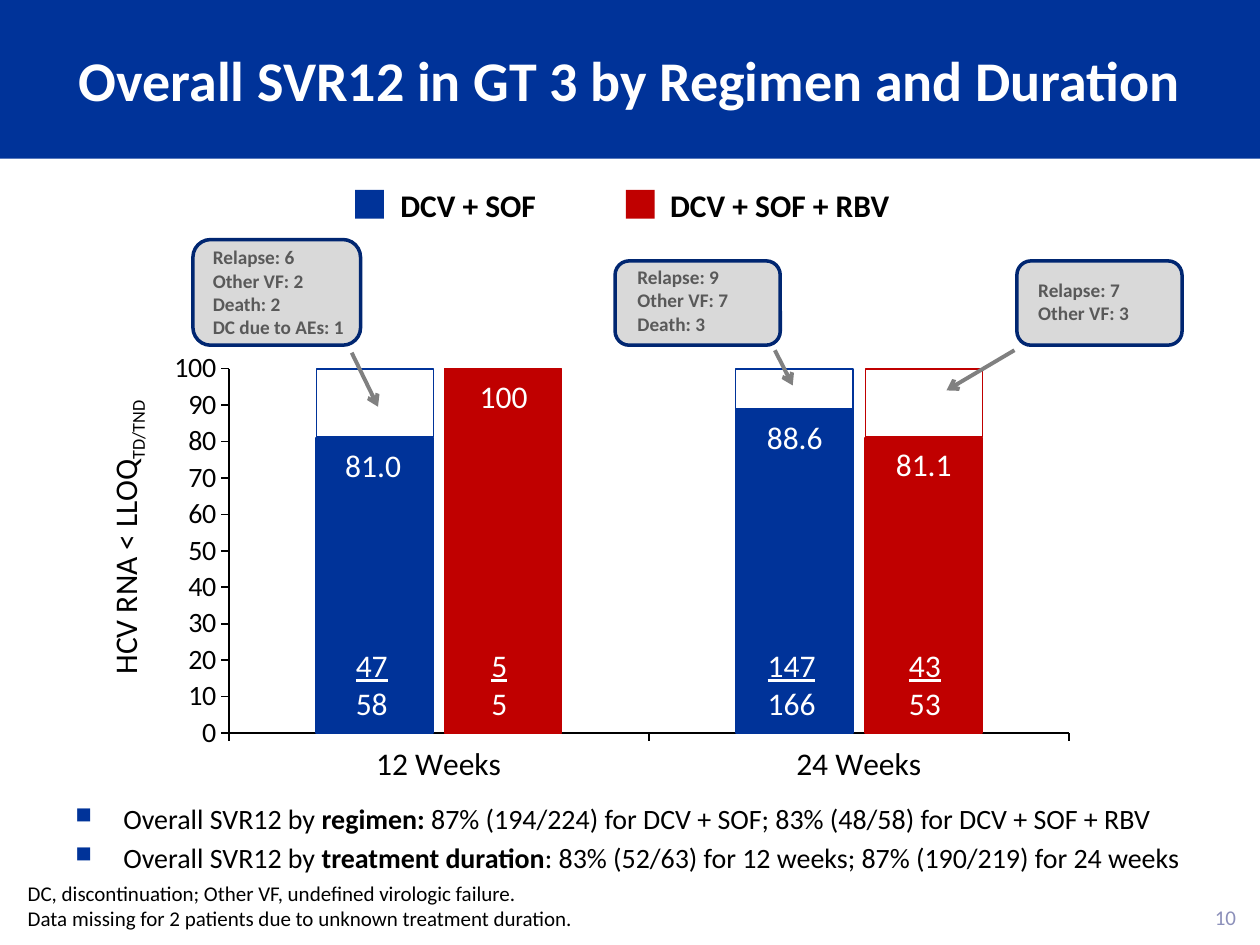
import dataclasses

import lxml.etree
import pptx
import pptx.chart.data
import pptx.dml.color
import pptx.enum.chart
import pptx.enum.shapes
import pptx.enum.text
import pptx.oxml
import pptx.oxml.ns
import pptx.util

Cm = pptx.util.Cm
Pt = pptx.util.Pt
Align = pptx.enum.text.PP_ALIGN
Anchor = pptx.enum.text.MSO_ANCHOR
AutoSize = pptx.enum.text.MSO_AUTO_SIZE
Preset = pptx.enum.shapes.MSO_SHAPE
qn = pptx.oxml.ns.qn


@dataclasses.dataclass(frozen=True)
class Theme:
    font: str = "Calibri"
    blue: str = "003399"
    red: str = "C00000"
    white: str = "FFFFFF"
    black: str = "000000"
    callout_fill: str = "D9D9D9"
    callout_line: str = "002671"
    callout_text: str = "595959"
    arrow: str = "808080"
    page_number: str = "8C90BA"
    title_size: int = 32
    label_size: int = 18
    body_size: int = 16
    note_size: int = 12
    callout_size: int = 11


THEME = Theme()


@dataclasses.dataclass(frozen=True)
class Span:
    text: str
    bold: bool = False
    underline: bool = False
    baseline: int = 0


@dataclasses.dataclass(frozen=True)
class Area:
    left: float
    top: float
    width: float
    height: float

    def lengths(self) -> tuple:
        return Cm(self.left), Cm(self.top), Cm(self.width), Cm(self.height)


@dataclasses.dataclass(frozen=True)
class Bar:
    left: float
    colour: str
    rate: str
    rate_area: Area
    responders: str
    patients: str
    fraction_area: Area
    gap: float


@dataclasses.dataclass(frozen=True)
class Callout:
    area: Area
    text_area: Area
    reasons: tuple
    arrow: tuple


@dataclasses.dataclass(frozen=True)
class LegendKey:
    label: str
    colour: str
    square: Area
    label_area: Area


BARS = (
    Bar(6.38, THEME.blue, "81.0", Area(6.71, 8.86, 1.65, 1.02),
        "47", "58", Area(6.91, 12.9, 1.17, 1.8), 1.37),
    Bar(8.97, THEME.red, "100", Area(9.42, 7.47, 1.5, 1.02),
        "5", "5", Area(9.65, 12.9, 0.84, 1.8), 0),
    Bar(14.83, THEME.blue, "88.6", Area(15.21, 8.31, 1.65, 1.02),
        "147", "166", Area(15.21, 12.9, 1.5, 1.8), 0.81),
    Bar(17.45, THEME.red, "81.1", Area(17.81, 8.84, 1.65, 1.02),
        "43", "53", Area(18.06, 12.9, 1.17, 1.8), 1.37),
)
CALLOUTS = (
    Callout(Area(3.89, 4.83, 3.38, 2.13), Area(4.04, 4.83, 3.23, 2.13),
            ("Relapse: 6", "Other VF: 2", "Death: 2", "DC due to AEs: 1"),
            (7.09, 7.11, 7.62, 8.2)),
    Callout(Area(12.4, 5.26, 3.33, 1.7), Area(12.6, 5.23, 2.36, 1.68),
            ("Relapse: 9", "Other VF: 7", "Death: 3"), (15.62, 7.06, 15.98, 7.77)),
    Callout(Area(20.5, 5.26, 3.33, 1.7), Area(20.68, 5.49, 2.36, 1.19),
            ("Relapse: 7", "Other VF: 3"), (20.45, 7.06, 19.08, 7.87)),
)
LEGEND = (
    LegendKey("DCV + SOF", THEME.blue, Area(7.16, 3.83, 0.58, 0.58), Area(7.82, 3.63, 3.28, 1.02)),
    LegendKey("DCV + SOF + RBV", THEME.red, Area(12.62, 3.83, 0.58, 0.58), Area(13.26, 3.63, 4.98, 1.02)),
)
FINDINGS = (
    (Span("Overall SVR12 by "), Span("regimen:", bold=True),
     Span(" 87% (194/224) for DCV + SOF; 83% (48/58) for DCV + SOF + RBV")),
    (Span("Overall SVR12 by "), Span("treatment duration", bold=True),
     Span(": 83% (52/63) for 12 weeks; 87% (190/219) for 24 weeks")),
)
NOTES = (
    (Span("DC, discontinuation; Other VF, undefined virologic failure."),),
    (Span("Data missing for 2 patients due to unknown treatment duration."),),
)


def rgb(colour: str):
    return pptx.dml.color.RGBColor.from_string(colour)


def style_font(font, size: int, colour: str) -> None:
    font.name, font.size = THEME.font, Pt(size)
    font.color.rgb = rgb(colour)


def write(box, paragraphs, size: int, colour: str, align=Align.LEFT, anchor=Anchor.TOP) -> None:
    frame = box.text_frame
    frame.vertical_anchor = anchor
    for index, spans in enumerate(paragraphs):
        para = frame.add_paragraph() if index else frame.paragraphs[0]
        para.alignment = align
        for span in spans:
            run = para.add_run()
            run.text = span.text
            style_font(run.font, size, colour)
            run.font.bold, run.font.underline = span.bold, span.underline
            if span.baseline:
                run.font._element.set("baseline", str(span.baseline))


def add_text(page, area: Area, paragraphs, size: int, colour: str,
             align=Align.LEFT, anchor=Anchor.TOP, wrap: bool = False):
    box = page.shapes.add_textbox(*area.lengths())
    box.text_frame.word_wrap = wrap
    box.text_frame.auto_size = AutoSize.NONE if wrap else AutoSize.SHAPE_TO_FIT_TEXT
    write(box, paragraphs, size, colour, align, anchor)
    return box


def add_box(page, preset, area: Area, fill: str = "", line: str = "", width: float = 1):
    box = page.shapes.add_shape(preset, *area.lengths())
    box.shadow.inherit = False
    if fill:
        box.fill.solid()
        box.fill.fore_color.rgb = rgb(fill)
    else:
        box.fill.background()
    if line:
        box.line.color.rgb, box.line.width = rgb(line), Pt(width)
    else:
        box.line.fill.background()
    return box


def add_arrow(page, ends: tuple) -> None:
    arrow = page.shapes.add_connector(
        pptx.enum.shapes.MSO_CONNECTOR.STRAIGHT, *(Cm(end) for end in ends))
    arrow.line.color.rgb, arrow.line.width = rgb(THEME.arrow), Pt(2.25)
    lxml.etree.SubElement(arrow.line._get_or_add_ln(), qn("a:tailEnd"), type="arrow")
    lxml.etree.SubElement(arrow._element.spPr, qn("a:effectLst"))


def place_plot(chart, **fractions: float) -> None:
    plot_area = chart._chartSpace.find(".//" + qn("c:plotArea"))
    for old in plot_area.findall(qn("c:layout")):
        plot_area.remove(old)
    layout = lxml.etree.Element(qn("c:layout"))
    manual = lxml.etree.SubElement(layout, qn("c:manualLayout"))
    settings = {"layoutTarget": "inner", "xMode": "edge", "yMode": "edge", **fractions}
    for name, value in settings.items():
        lxml.etree.SubElement(manual, qn("c:" + name), val=str(value))
    plot_area.insert(0, layout)


def add_response_chart(page) -> None:
    data = pptx.chart.data.CategoryChartData()
    data.categories = ["12 Weeks", "24 Weeks"]
    data.add_series("Series 1", (81, 89))
    data.add_series("Series 2", (100, 81))
    chart = page.shapes.add_chart(
        pptx.enum.chart.XL_CHART_TYPE.COLUMN_CLUSTERED,
        *Area(1.98, 5.51, 22.86, 10.62).lengths(), data).chart
    chart.has_legend = chart.has_title = False
    style_font(chart.font, THEME.label_size, THEME.blue)
    plot = chart.plots[0]
    plot.overlap, plot.gap_width, plot.vary_by_categories = -10, 149, False
    for series, colour in zip(plot.series, (THEME.blue, THEME.red)):
        series.format.fill.solid()
        series.format.fill.fore_color.rgb = rgb(colour)
        series.format.line.color.rgb, series.format.line.width = rgb(colour), Pt(1)
    for axis, size in ((chart.category_axis, THEME.label_size), (chart.value_axis, THEME.body_size)):
        style_font(axis.tick_labels.font, size, THEME.black)
        axis.format.line.color.rgb, axis.format.line.width = rgb(THEME.black), Pt(1)
        axis.major_tick_mark = pptx.enum.chart.XL_TICK_MARK.OUTSIDE
        axis.has_major_gridlines = False
    value_axis = chart.value_axis
    value_axis.minimum_scale, value_axis.maximum_scale, value_axis.major_unit = 0, 100, 10
    place_plot(chart, x=0.115, y=0.181, w=0.741, h=0.692)


def add_bar_labels(page, bar: Bar) -> None:
    fraction = ((Span(bar.responders, underline=True),), (Span(bar.patients),))
    add_text(page, bar.fraction_area, fraction, THEME.label_size, THEME.white, Align.CENTER)
    add_text(page, bar.rate_area, ((Span(bar.rate),),), THEME.label_size, THEME.white)
    if bar.gap:
        add_box(page, Preset.RECTANGLE, Area(bar.left, 7.44, 2.36, bar.gap), line=bar.colour)


def add_callout(page, callout: Callout) -> None:
    add_box(page, Preset.ROUNDED_RECTANGLE, callout.area, THEME.callout_fill, THEME.callout_line, 2)
    reasons = [(Span(reason, bold=True),) for reason in callout.reasons]
    add_text(page, callout.text_area, reasons, THEME.callout_size, THEME.callout_text)
    add_arrow(page, callout.arrow)


def add_legend_key(page, key: LegendKey) -> None:
    add_box(page, Preset.RECTANGLE, key.square, key.colour)
    add_text(page, key.label_area, ((Span(key.label, bold=True),),), THEME.label_size, THEME.black)


def add_findings(page) -> None:
    box = add_text(page, Area(1.27, 16.03, 23.29, 2.46), FINDINGS,
                   THEME.body_size, THEME.black, wrap=True)
    for para in box.text_frame.paragraphs:
        para.space_before = Pt(3.2)
        properties = para._p.get_or_add_pPr()
        properties.set("marL", str(Cm(0.97)))
        properties.set("indent", str(Cm(-0.97)))
        colour = lxml.etree.SubElement(properties, qn("a:buClr"))
        lxml.etree.SubElement(colour, qn("a:srgbClr"), val=THEME.blue)
        lxml.etree.SubElement(properties, qn("a:buSzPct"), val="80000")
        lxml.etree.SubElement(properties, qn("a:buChar"), char="■")


def main() -> None:
    deck = pptx.Presentation()
    deck.slide_width, deck.slide_height = Cm(25.4), Cm(19.05)
    page = deck.slides.add_slide(deck.slide_layouts[6])
    title = add_box(page, Preset.RECTANGLE, Area(0, 0, 25.4, 3.2), THEME.blue)
    write(title, ((Span("Overall SVR12 in GT 3 by Regimen and Duration", bold=True),),),
          THEME.title_size, THEME.white, Align.CENTER, Anchor.MIDDLE)
    add_response_chart(page)
    add_text(page, Area(24.17, 18.11, 1, 0.76), ((Span("10"),),),
             THEME.note_size, THEME.page_number, Align.RIGHT, Anchor.MIDDLE, wrap=True)
    for bar in BARS:
        add_bar_labels(page, bar)
    for callout in CALLOUTS:
        add_callout(page, callout)
    axis_title = ((Span("HCV RNA < LLOQ"), Span("TD/TND", baseline=-25000)),)
    add_text(page, Area(-0.66, 10.16, 6.35, 1.02), axis_title,
             THEME.label_size, THEME.black).rotation = 270
    for key in LEGEND:
        add_legend_key(page, key)
    add_findings(page)
    frame = add_text(page, Area(0.56, 17.75, 24.28, 1.02), NOTES, THEME.note_size,
                     THEME.black, anchor=Anchor.BOTTOM, wrap=True).text_frame
    frame.margin_left = frame.margin_top = frame.margin_right = frame.margin_bottom = 0
    deck.save("out.pptx")


if __name__ == "__main__":
    main()
